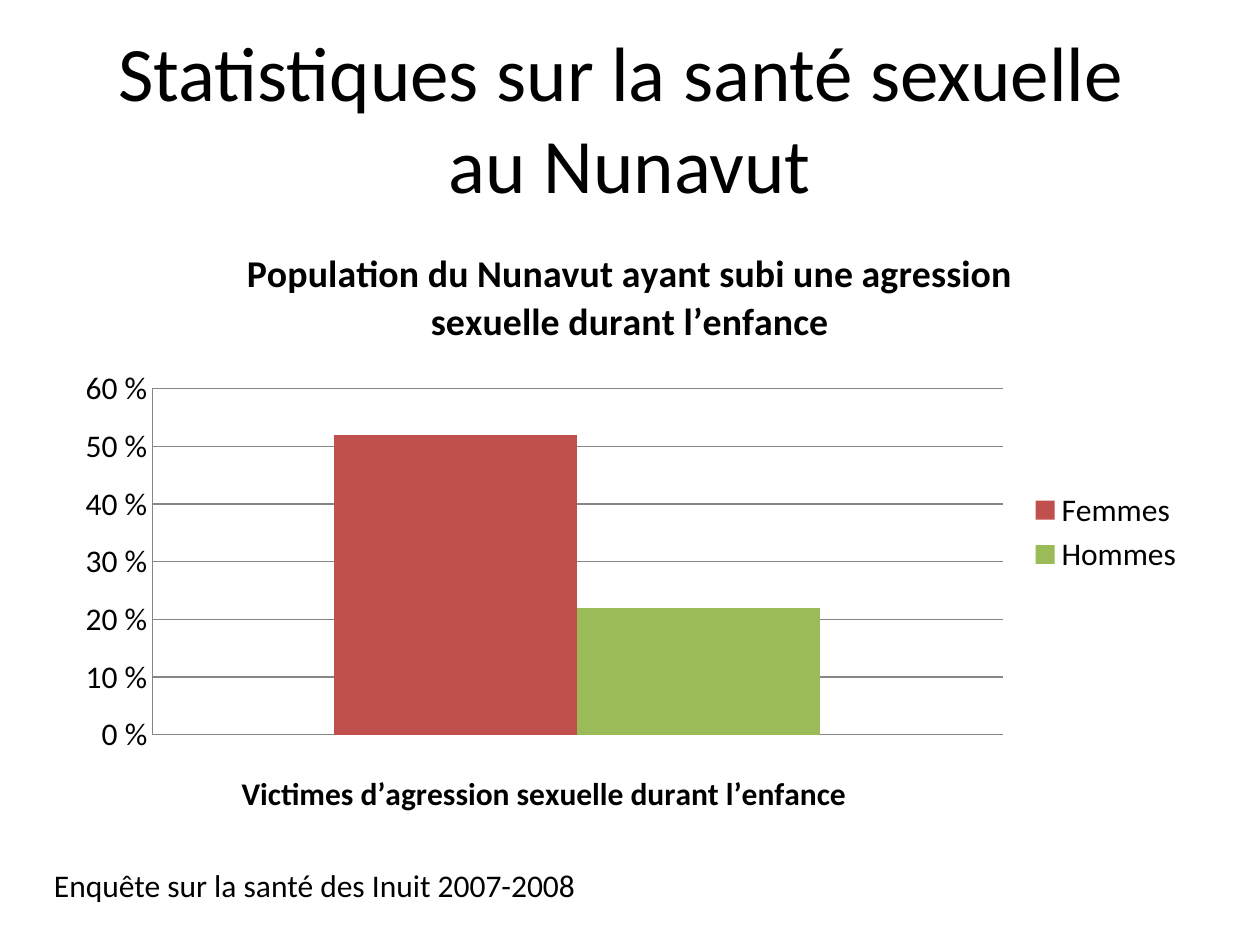
import pptx
import pptx.util
import pptx.chart.data
import pptx.dml.color
import pptx.enum.chart
import pptx.enum.text

Pt = pptx.util.Pt
ENUM = pptx.enum.chart
MID = pptx.enum.text.MSO_ANCHOR.MIDDLE
MID_ROW = pptx.enum.text.PP_ALIGN.CENTER

FONT = "Calibri"
COLORS = {"text": "000000", "grid": "868686", "Femmes": "C0504D", "Hommes": "9BBB59"}
TITLE = ["Statistiques sur la santé sexuelle ", "au Nunavut"]
HEAD = "Population du Nunavut ayant subi une agression sexuelle durant l’enfance"
AXIS = "Victimes d’agression sexuelle durant l’enfance"
RATES = {"Femmes": 0.52, "Hommes": 0.22}
SOURCE = "Enquête sur la santé des Inuit 2007-2008"

# Shares of the slide: left, top, width, height
SPOTS = {
    "title": (0.05, 0.04, 0.9, 1 / 6),
    "chart": (0.05, 7 / 30, 0.9, 0.66),
    "source": (0.033, 0.91, 0.483, 0.054),
}

deck = pptx.Presentation()
deck.slide_width = pptx.util.Inches(10)
deck.slide_height = pptx.util.Inches(7.5)
slide = deck.slides.add_slide(deck.slide_layouts[5])


def spot(name):
    """Turn the shares of a part into lengths on the slide."""
    size = (deck.slide_width, deck.slide_height) * 2
    return [int(share * full) for share, full in zip(SPOTS[name], size)]


def color(name):
    return pptx.dml.color.RGBColor.from_string(COLORS[name])


def style(font, size, bold=False):
    font.name, font.size, font.bold = FONT, Pt(size), bold
    font.color.rgb = color("text")


def write(par, text, size, bold=False):
    run = par.add_run()
    run.text = text
    style(run.font, size, bold)


def rule(line):
    line.color.rgb = color("grid")
    line.width = Pt(0.75)


def add_title():
    title = slide.shapes.title
    title.left, title.top, title.width, title.height = spot("title")
    title.text_frame.vertical_anchor = MID
    par = title.text_frame.paragraphs[0]
    par.alignment = MID_ROW
    for row, text in enumerate(TITLE):
        if row:
            par.add_line_break()
        write(par, text, 44)


def add_chart():
    data = pptx.chart.data.CategoryChartData(number_format="0%")
    data.categories = ["1"]
    for name, rate in RATES.items():
        data.add_series(name, [rate])
    kind = ENUM.XL_CHART_TYPE.COLUMN_CLUSTERED
    chart = slide.shapes.add_chart(kind, *spot("chart"), data).chart
    style(chart.font, 18)

    chart.has_title = True
    write(chart.chart_title.text_frame.paragraphs[0], HEAD, 21.6, True)
    chart.chart_title.include_in_layout = False

    chart.has_legend = True
    chart.legend.position = ENUM.XL_LEGEND_POSITION.RIGHT
    chart.legend.include_in_layout = False

    base = chart.category_axis
    base.visible = False
    write(base.axis_title.text_frame.paragraphs[0], AXIS, 18, True)

    scale = chart.value_axis
    scale.minimum_scale, scale.maximum_scale, scale.major_unit = 0, 0.6, 0.1
    scale.major_tick_mark = ENUM.XL_TICK_MARK.NONE
    scale.tick_labels.number_format = "0\\ %"
    scale.tick_labels.number_format_is_linked = False
    scale.has_major_gridlines = True
    rule(scale.major_gridlines.format.line)
    rule(scale.format.line)

    plot = chart.plots[0]
    plot.gap_width, plot.overlap = 150, 0
    plot.vary_by_categories = False
    for bar in plot.series:
        bar.format.fill.solid()
        bar.format.fill.fore_color.rgb = color(bar.name)


def add_source():
    frame = slide.shapes.add_textbox(*spot("source")).text_frame
    frame.word_wrap = True
    frame.auto_size = pptx.enum.text.MSO_AUTO_SIZE.SHAPE_TO_FIT_TEXT
    write(frame.paragraphs[0], SOURCE, 18)


add_title()
add_chart()
add_source()
deck.save("out.pptx")
